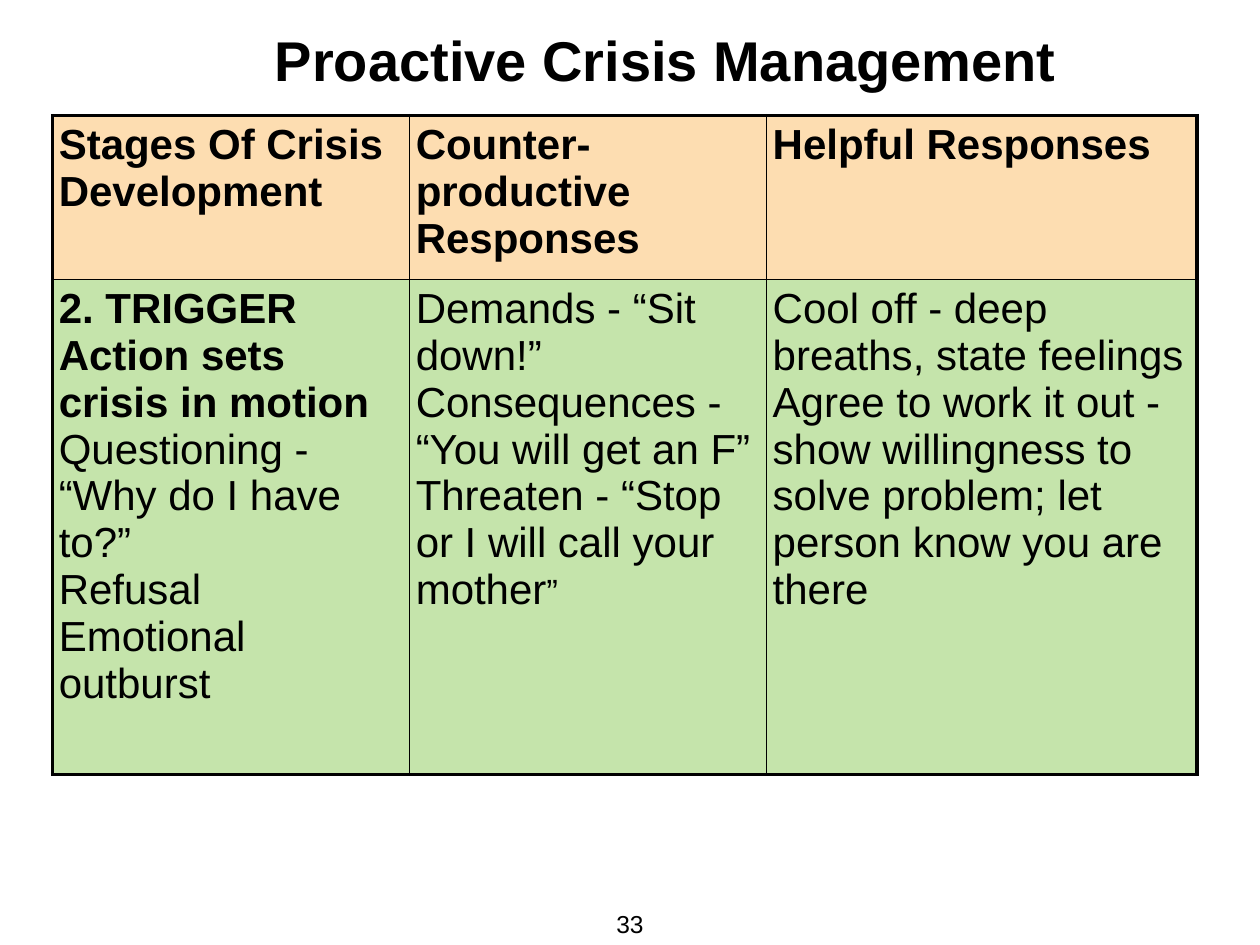
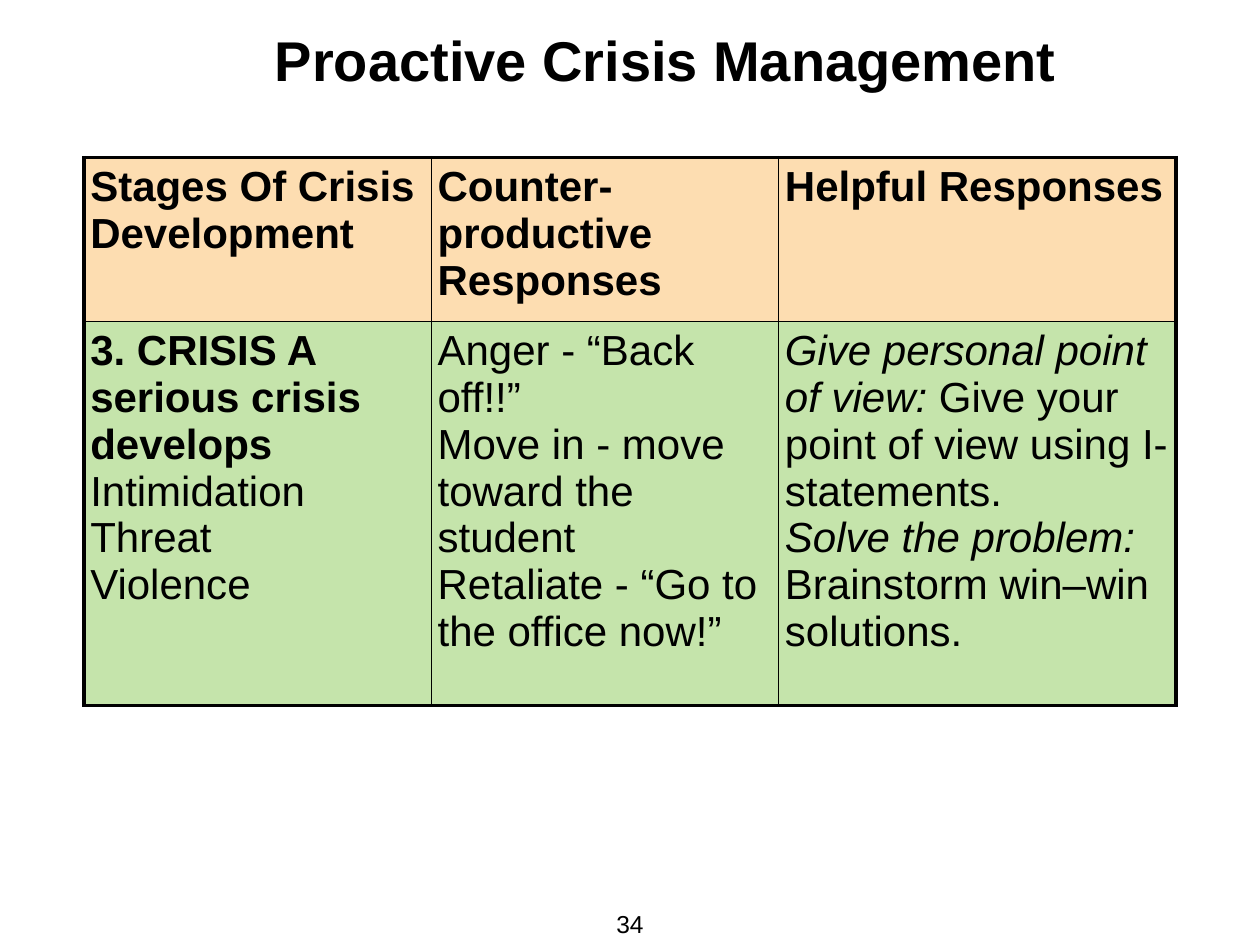
"""Build two crisis management slides, each with a table of responses."""
from typing import NamedTuple

from lxml.etree import SubElement
from pptx import Presentation
from pptx.dml.color import RGBColor
from pptx.enum.text import MSO_ANCHOR, MSO_AUTO_SIZE, PP_ALIGN
from pptx.oxml.ns import qn
from pptx.util import Pt

BLACK = RGBColor(0, 0, 0)
PEACH = RGBColor(0xFD, 0xDD, 0xB1)
GREEN = RGBColor(0xC5, 0xE4, 0xAB)
FONT = "Arial"
PAD = Pt(3.6)
THICK, THIN = Pt(2.25), Pt(1)
HEAD_H = Pt(93.6)
TITLE = "Proactive Crisis Management"
HEADS = ["Stages Of Crisis Development", "Counter-productive Responses", "Helpful Responses"]


class Run(NamedTuple):
    text: str
    bold: bool = False
    italic: bool = False
    size: float = 24


class Stage(NamedTuple):
    page: int
    left: float
    top: float
    cols: tuple[float, float, float]
    height: float
    cells: list[list[list[Run]]]


STAGES = [
    Stage(33, 30, 66, (204, 204, 246), 283, [
        [[Run("2. TRIGGER Action sets crisis in motion", bold=True)],
         [Run("Questioning - “Why do I have to?”")],
         [Run("Refusal")],
         [Run("Emotional outburst")]],
        [[Run("Demands - “Sit down!”")],
         [Run("Consequences - “You will get an F”")],
         [Run("Threaten - “Stop or I will call your mother"), Run("”", size=20)]],
        [[Run("Cool off - deep breaths, state feelings")],
         [Run("Agree to work it out - show willingness to solve problem; "
              "let person know you are there")]],
    ]),
    Stage(34, 48, 90, (198.5, 198.5, 227), 219.6, [
        [[Run("3. CRISIS A serious crisis develops", bold=True)],
         [Run("Intimidation")],
         [Run("Threat")],
         [Run("Violence")]],
        [[Run("Anger - “Back off!!”")],
         [Run("Move in - move toward the student")],
         [Run("Retaliate - “Go to the office now!”")]],
        [[Run("Give personal point of view:", italic=True),
          Run(" Give your point of view using I-statements.")],
         [Run("Solve the problem:", italic=True),
          Run(" Brainstorm win–win solutions.")]],
    ]),
]


def write(frame, paras: list[list[Run]], align=PP_ALIGN.LEFT, spacing: float = 1.0) -> None:
    """Fill a text frame with paragraphs of formatted runs."""
    for i, runs in enumerate(paras):
        para = frame.add_paragraph() if i else frame.paragraphs[0]
        para.alignment = align
        para.line_spacing = spacing
        para.space_before = Pt(0)
        for item in runs:
            run = para.add_run()
            run.text = item.text
            font = run.font
            font.name, font.size = FONT, Pt(item.size)
            font.bold, font.italic = item.bold, item.italic
            font.color.rgb = BLACK


def set_frame(frame, anchor) -> None:
    """Give a free text frame its margins, anchor and wrapping."""
    frame.margin_left = frame.margin_right = PAD
    frame.margin_top = frame.margin_bottom = PAD
    frame.vertical_anchor = anchor
    frame.auto_size = MSO_AUTO_SIZE.NONE
    frame.word_wrap = False


def add_title(slide) -> None:
    """Place and format the slide title."""
    title = slide.shapes.title
    title.left, title.top, title.width, title.height = Pt(74.5), Pt(0), Pt(540), Pt(90)
    frame = title.text_frame
    set_frame(frame, MSO_ANCHOR.TOP)
    write(frame, [[Run(TITLE, bold=True, size=32)]], align=PP_ALIGN.CENTER, spacing=1.28)
    props = frame.paragraphs[0]._p.get_or_add_pPr()
    props.set("marL", "0")
    props.set("indent", str(Pt(72)))


def add_page(slide, page: int) -> None:
    """Add the page number at the foot."""
    box = slide.shapes.add_textbox(Pt(348), Pt(515.5), Pt(24), Pt(24.5))
    set_frame(box.text_frame, MSO_ANCHOR.BOTTOM)
    write(box.text_frame, [[Run(str(page), size=14)]], align=PP_ALIGN.CENTER)


def add_edges(cell, row: int, col: int) -> None:
    """Draw thick lines round the table and thin ones inside."""
    props = cell._tc.get_or_add_tcPr()
    outer = {"lnL": col == 0, "lnR": col == 2, "lnT": row == 0, "lnB": row == 1}
    for tag, thick in outer.items():
        line = SubElement(props, qn(f"a:{tag}"), w=str(THICK if thick else THIN))
        fill = SubElement(line, qn("a:solidFill"))
        SubElement(fill, qn("a:srgbClr"), val=str(BLACK))


def add_grid(slide, stage: Stage) -> None:
    """Add the table of one crisis stage."""
    height = Pt(stage.height)
    shape = slide.shapes.add_table(2, 3, Pt(stage.left), Pt(stage.top),
                                   Pt(sum(stage.cols)), HEAD_H + height)
    table = shape.table
    table.first_row = table.horz_banding = False
    for col, width in zip(table.columns, stage.cols):
        col.width = Pt(width)
    table.rows[0].height, table.rows[1].height = HEAD_H, height
    heads = [[[Run(head, bold=True)]] for head in HEADS]
    for row, (cells, color) in enumerate([(heads, PEACH), (stage.cells, GREEN)]):
        for col, paras in enumerate(cells):
            cell = table.cell(row, col)
            cell.margin_left = cell.margin_right = PAD
            cell.margin_top = cell.margin_bottom = PAD
            add_edges(cell, row, col)
            cell.fill.solid()
            cell.fill.fore_color.rgb = color
            write(cell.text_frame, paras)


def main() -> None:
    """Build and save the slides."""
    deck = Presentation()
    deck.slide_width, deck.slide_height = Pt(720), Pt(540)
    for stage in STAGES:
        slide = deck.slides.add_slide(deck.slide_layouts[5])
        add_page(slide, stage.page)
        add_title(slide)
        add_grid(slide, stage)
    deck.save("out.pptx")


if __name__ == "__main__":
    main()
